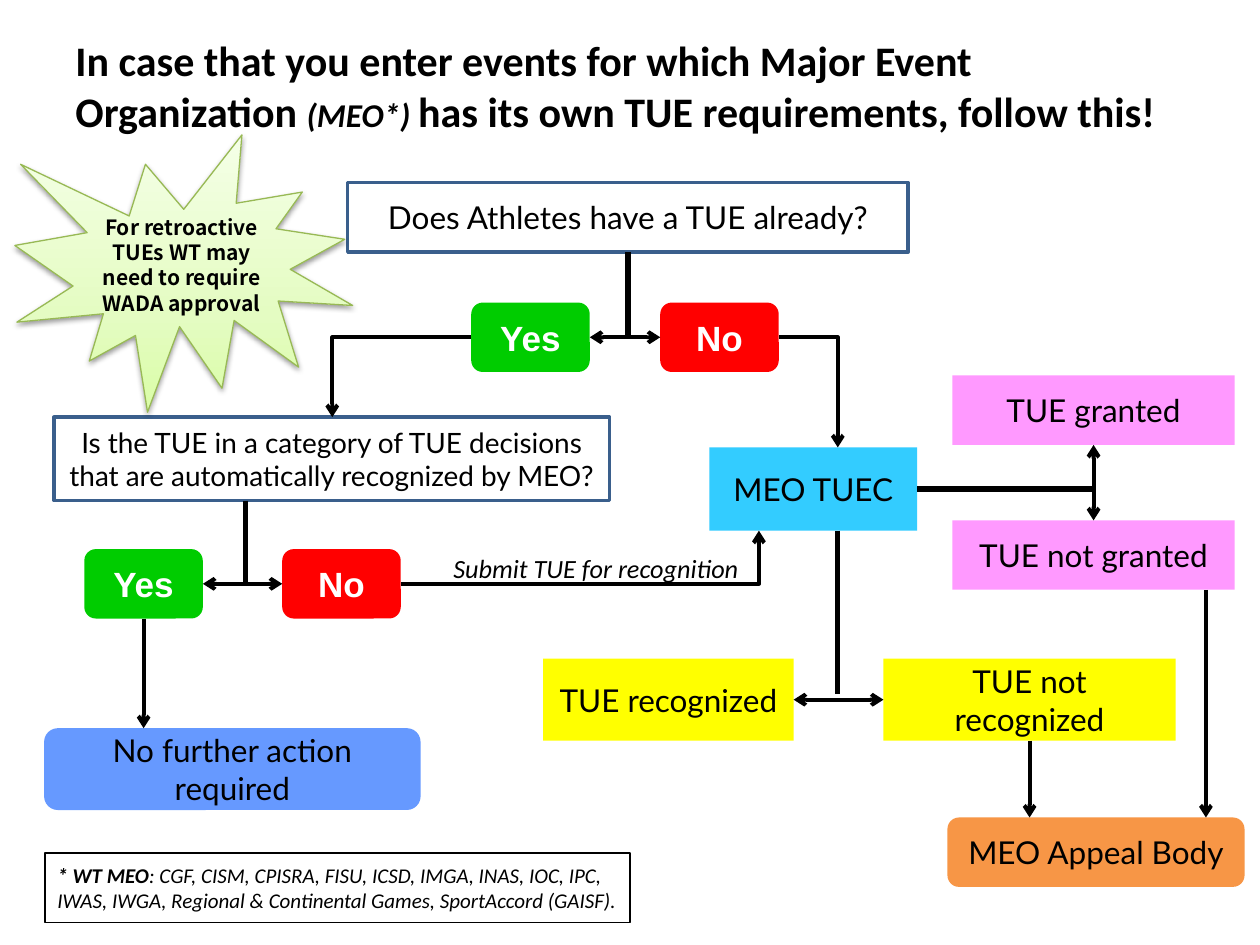
from copy import deepcopy

from pptx import Presentation
from pptx.dml.color import RGBColor
from pptx.enum.shapes import MSO_CONNECTOR as Connector, MSO_SHAPE as Shape
from pptx.enum.text import MSO_ANCHOR as Anchor, MSO_AUTO_SIZE as AutoSize, PP_ALIGN as Align
from pptx.oxml import parse_xml
from pptx.oxml.ns import nsdecls, qn
from pptx.util import Cm, Pt

COLORS = {
    "black": "000000", "white": "FFFFFF", "outline": "3A5F8C",
    "yes": "00CC00", "no": "FF0000", "committee": "33CCFF",
    "granting": "FF99FF", "recognition": "FFFF00", "action": "6699FF",
    "appeal": "F79646", "burst_line": "98B955",
    "burst_deep": "DAFDA7", "burst_mid": "E4FCC2", "burst_pale": "F5FFE7",
}
TOP, LEFT, BOTTOM, RIGHT = range(4)


class FlowSlide:
    """Holds the style and the current slide, with a method for each kind of element."""

    font, size, arrow_width, stem_width = "Lato", 18, 2.25, 3

    def __init__(self, presentation):
        self.slide = presentation.slides.add_slide(presentation.slide_layouts[6])

    def color(self, name):
        return RGBColor.from_string(COLORS[name])

    def add_runs(self, shape, runs, font, size, color="black", align=Align.CENTER, anchor=Anchor.MIDDLE):
        frame = shape.text_frame
        frame.word_wrap = True
        frame.vertical_anchor = anchor
        paragraph = frame.paragraphs[0]
        paragraph.alignment = align
        for text, style in runs:
            run = paragraph.add_run()
            run.text = text
            run.font.name = font
            run.font.size = Pt(style.get("size", size))
            run.font.bold = style.get("bold", False)
            run.font.italic = style.get("italic", False)
            run.font.color.rgb = self.color(color)

    def text(self, place, runs, size, anchor=Anchor.TOP):
        shape = self.slide.shapes.add_textbox(*map(Cm, place))
        self.add_runs(shape, runs, "Calibri", size, align=Align.LEFT, anchor=anchor)
        return shape

    def shape(self, kind, place, fill=None, line=None, width=2):
        shape = self.slide.shapes.add_shape(kind, *map(Cm, place))
        shape.shadow.inherit = False
        if fill:
            shape.fill.solid()
            shape.fill.fore_color.rgb = self.color(fill)
        else:
            shape.fill.background()
        if line:
            shape.line.color.rgb = self.color(line)
            shape.line.width = Pt(width)
        else:
            shape.line.fill.background()
        return shape

    def box(self, text, place, fill=None, line=None, kind=Shape.RECTANGLE, size=None):
        shape = self.shape(kind, place, fill, line)
        self.add_runs(shape, [(text, {})], self.font, size or self.size)
        return shape

    def answer(self, text, left, top):
        shape = self.shape(Shape.ROUNDED_RECTANGLE, (left, top, 2.39, 1.4), text.lower())
        self.add_runs(shape, [(text, {"bold": True})], "Arial", 20, "white")
        return shape

    def burst(self, text, place):
        shape = self.shape(Shape.EXPLOSION1, place, line="burst_line", width=0.75)
        shape.fill.gradient()
        shape.fill.gradient_angle = 90
        properties = shape._element.spPr
        first = properties.find(".//" + qn("a:gs"))
        first.addnext(deepcopy(first))
        stops = (0, "burst_deep"), (0.35, "burst_mid"), (1, "burst_pale")
        for stop, (position, name) in zip(shape.fill.gradient_stops, stops):
            stop.position = position
            stop.color.rgb = self.color(name)
        properties.find(qn("a:effectLst")).append(parse_xml(
            f'<a:outerShdw {nsdecls("a")} blurRad="{Pt(3.1)}" dist="{Pt(1.6)}" dir="5400000" rotWithShape="0">'
            f'<a:srgbClr val="{COLORS["black"]}"><a:alpha val="38000"/></a:srgbClr></a:outerShdw>'))
        self.add_runs(shape, [(text, {"bold": True})], "Noto Sans CJK KR", 12)

    def side(self, shape, site):
        across = {LEFT: 0, RIGHT: 2}.get(site, 1)
        down = {TOP: 0, BOTTOM: 2}.get(site, 1)
        return shape.left + shape.width * across // 2, shape.top + shape.height * down // 2

    def connect(self, kind, start, end, width, ends=()):
        connector = self.slide.shapes.add_connector(kind, *start, *end)
        connector.line.color.rgb = self.color("black")
        connector.line.width = Pt(width)
        line = connector._element.spPr.find(qn("a:ln"))
        for tag in ends:
            line.append(parse_xml(f'<a:{tag} {nsdecls("a")} type="arrow"/>'))
        connector._element.spPr.append(parse_xml(f'<a:effectLst {nsdecls("a")}/>'))
        return connector

    def between(self, first, first_site, second, second_site):
        connector = self.connect(
            Connector.STRAIGHT, self.side(first, first_site), self.side(second, second_site),
            self.arrow_width, ("headEnd", "tailEnd"))
        connector.begin_connect(first, first_site)
        connector.end_connect(second, second_site)

    def leave(self, shape, site, end, width, ends=()):
        x, y = self.side(shape, site)
        target = (x, Cm(end)) if site in (TOP, BOTTOM) else (Cm(end), y)
        self.connect(Connector.STRAIGHT, (x, y), target, width, ends).begin_connect(shape, site)

    def vertical(self, x, top, bottom, width, ends=()):
        self.connect(Connector.STRAIGHT, (Cm(x), Cm(top)), (Cm(x), Cm(bottom)), width, ends)

    def elbow(self, shape, site, x, y):
        connector = self.connect(
            Connector.ELBOW, self.side(shape, site), (Cm(x), Cm(y)), self.arrow_width, ("tailEnd",))
        connector._element.spPr.find(qn("a:prstGeom")).set("prst", "bentConnector2")


def main():
    presentation = Presentation()
    presentation.slide_width, presentation.slide_height = Cm(25.4), Cm(19.05)
    flow = FlowSlide(presentation)
    rounded = Shape.ROUNDED_RECTANGLE

    flow.text((1.27, 0.13, 22.86, 3.18), [
        ("In case that you enter events for which Major Event Organization ", {"bold": True}),
        ("(MEO*) ", {"bold": True, "italic": True, "size": 19}),
        ("has its own TUE requirements, follow this!", {"bold": True}),
    ], 24, Anchor.MIDDLE)

    question = flow.box("Does Athletes have a TUE already?", (7.01, 3.68, 11.3, 1.4), line="outline")
    has_tue, no_tue = flow.answer("Yes", 9.5, 6.1), flow.answer("No", 13.31, 6.1)
    flow.box("Is the TUE in a category of TUE decisions that are automatically recognized by MEO?",
             (1.09, 8.41, 11.2, 1.68), line="outline", size=16)
    committee = flow.box("MEO TUEC", (14.3, 9.02, 4.19, 1.68), "committee")
    not_granted = flow.box("TUE not granted", (19.2, 10.49, 5.69, 1.4), "granting")
    granted = flow.box("TUE granted", (19.2, 7.57, 5.69, 1.4), "granting")
    not_recognized = flow.box("TUE not recognized", (17.81, 13.28, 5.89, 1.65), "recognition")
    recognized = flow.box("TUE recognized", (10.95, 13.28, 5.05, 1.65), "recognition")
    flow.box("No further action required", (0.89, 14.68, 7.59, 1.65), "action", kind=rounded)
    flow.box("MEO Appeal Body", (19.1, 16.48, 5.99, 1.4), "appeal", kind=rounded)
    automatic, not_automatic = flow.answer("Yes", 1.7, 11.07), flow.answer("No", 5.69, 11.07)

    flow.leave(committee, RIGHT, 22.05, flow.stem_width)
    flow.leave(question, BOTTOM, 6.8, flow.stem_width)
    flow.vertical(16.89, 10.7, 14, flow.stem_width)
    flow.vertical(4.95, 10.09, 11.77, flow.stem_width)

    for left, right in ((has_tue, no_tue), (automatic, not_automatic), (recognized, not_recognized)):
        flow.between(left, RIGHT, right, LEFT)
    flow.between(granted, BOTTOM, not_granted, TOP)
    flow.leave(automatic, BOTTOM, 14.68, flow.arrow_width, ("tailEnd",))
    flow.leave(not_recognized, BOTTOM, 16.48, flow.arrow_width, ("tailEnd",))
    flow.vertical(24.31, 11.89, 16.48, flow.arrow_width, ("tailEnd",))

    flow.elbow(has_tue, LEFT, 6.7, 8.41)
    flow.elbow(no_tue, RIGHT, 16.89, 9.02)
    flow.elbow(not_automatic, RIGHT, 15.3, 10.7)

    label = flow.text((8.89, 11, 6.81, 0.89), [("Submit TUE for recognition", {"italic": True})], 15)
    label.text_frame.auto_size = AutoSize.SHAPE_TO_FIT_TEXT
    note = flow.shape(Shape.RECTANGLE, (0.91, 17.2, 11.79, 1.4), line="black", width=1)
    flow.add_runs(note, [
        ("* WT MEO", {"bold": True, "italic": True}),
        (": CGF, CISM, CPISRA, FISU, ICSD, IMGA, INAS, IOC, IPC, IWAS, IWGA, "
         "Regional & Continental Games, SportAccord (GAISF).", {"italic": True}),
    ], "Calibri", 12, align=Align.LEFT)
    flow.burst("For retroactive TUEs WT may need to require WADA approval", (0.3, 2.72, 6.81, 5.59))

    presentation.save("out.pptx")


if __name__ == "__main__":
    main()
